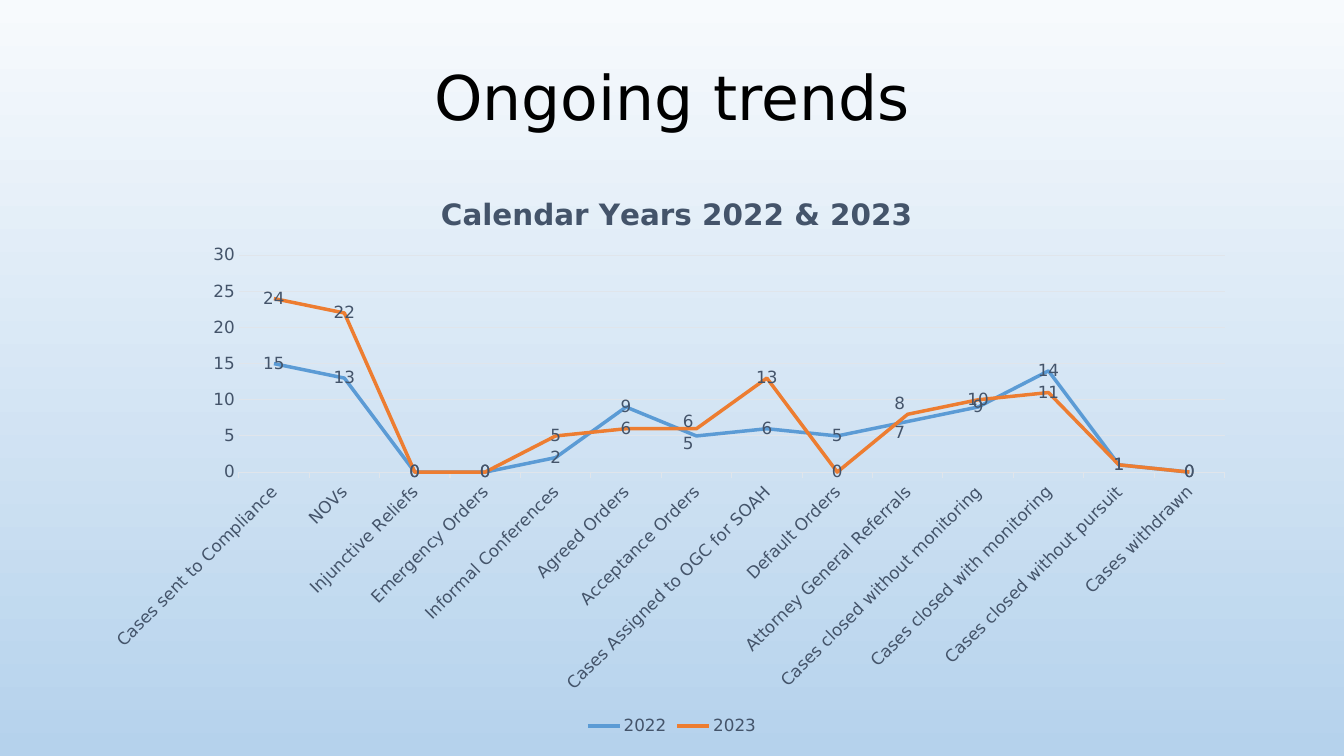
from lxml import etree
from pptx import Presentation
from pptx.chart.data import CategoryChartData
from pptx.dml.color import RGBColor
from pptx.enum.chart import (XL_CHART_TYPE, XL_LABEL_POSITION, XL_LEGEND_POSITION,
                             XL_MARKER_STYLE, XL_TICK_MARK)
from pptx.enum.text import MSO_ANCHOR, PP_ALIGN
from pptx.oxml.ns import qn
from pptx.util import Inches, Pt

LINE = XL_CHART_TYPE.LINE
CENTER_LABEL = XL_LABEL_POSITION.CENTER
BOTTOM = XL_LEGEND_POSITION.BOTTOM
NO_MARKER = XL_MARKER_STYLE.NONE
TICK_OUT, TICK_NONE = XL_TICK_MARK.OUTSIDE, XL_TICK_MARK.NONE

# Content
TITLE = "Ongoing trends"
CHART_TITLE = "Calendar Years 2022 & 2023"
CASES = [  # category, 2022, 2023
    ("Cases sent to Compliance", 15, 24),
    ("NOVs", 13, 22),
    ("Injunctive Reliefs", 0, 0),
    ("Emergency Orders", 0, 0),
    ("Informal Conferences", 2, 5),
    ("Agreed Orders", 9, 6),
    ("Acceptance Orders", 5, 6),
    ("Cases Assigned to OGC for SOAH", 6, 13),
    ("Default Orders", 5, 0),
    ("Attorney General Referrals", 7, 8),
    ("Cases closed without monitoring", 9, 10),
    ("Cases closed with monitoring", 14, 11),
    ("Cases closed without pursuit", 1, 1),
    ("Cases withdrawn", 0, 0),
]
YEARS = ["2022", "2023"]
COLORS = {"2022": "5B9BD5", "2023": "ED7D31", "text": "44546A", "grid": "E0E5EB",
          "title": "000000", "top": "F7FAFD", "bottom": "B5D2EC"}
FONT = "DejaVu Sans"

# Label shifts as shares of the chart: point -> (across, down), mirrored for 2023
LABEL_SHIFTS = {6: (-0.007, 0.013), 9: (-0.007, 0.019)}
# Chart parts as shares of the chart
PLOT = {"x": 0.126, "y": 0.158, "w": 0.851, "h": 0.377}
TITLE_SPOT = {"x": 0.296, "y": 0.043}

W, H = Inches(13.33), Inches(7.5)
MARGIN = Inches(0.92)


def color(name):
    return RGBColor.from_string(COLORS[name])


def style_font(font, size, name="text", bold=False):
    font.name, font.size, font.bold = FONT, Pt(size), bold
    font.color.rgb = color(name)


def style_line(line, name, width):
    line.color.rgb = color(name)
    line.width = Pt(width)


def set_layout(parent, index, spot, edge=True, inner=False):
    """Place a chart part by shares of the chart."""
    for old in parent.findall(qn("c:layout")):
        parent.remove(old)
    layout = etree.Element(qn("c:layout"))
    manual = etree.SubElement(layout, qn("c:manualLayout"))
    entries = [("layoutTarget", "inner")] if inner else []
    if edge:
        entries += [("xMode", "edge"), ("yMode", "edge")]
    for tag, value in entries + list(spot.items()):
        etree.SubElement(manual, qn("c:" + tag)).set("val", str(value))
    parent.insert(index, layout)


prs = Presentation()
prs.slide_width, prs.slide_height = W, H
s = prs.slides.add_slide(prs.slide_layouts[6])

# Background gradient
fill = s.background.fill
fill.gradient()
fill.gradient_angle = 270
for stop, name in zip(fill.gradient_stops, ("top", "bottom")):
    stop.color.rgb = color(name)

# Slide title
tf = s.shapes.add_textbox(MARGIN, H * 0.02, W - 2 * MARGIN, Inches(1.7)).text_frame
tf.word_wrap = True
tf.vertical_anchor = MSO_ANCHOR.MIDDLE
tf.text = TITLE
p = tf.paragraphs[0]
p.alignment, p.line_spacing = PP_ALIGN.CENTER, 0.9
style_font(p.runs[0].font, 44, "title")

# Chart
data = CategoryChartData()
data.categories = [row[0] for row in CASES]
for i, year in enumerate(YEARS, 1):
    data.add_series(year, [row[i] for row in CASES])
chart = s.shapes.add_chart(LINE, MARGIN, Inches(1.63), W - 2 * MARGIN,
                           Inches(5.71), data).chart
chart.font.name, chart.font.size = FONT, Pt(10)
plot = chart.plots[0]
plot.vary_by_categories = False
set_layout(chart.element.find(".//" + qn("c:plotArea")), 0, PLOT, inner=True)

# Chart title and legend
chart.has_title = True
title = chart.chart_title
title.include_in_layout = False
title.text_frame.text = CHART_TITLE
style_font(title.text_frame.paragraphs[0].runs[0].font, 21, bold=True)
set_layout(chart.element.find(".//" + qn("c:title")), 1, TITLE_SPOT)
chart.has_legend = True
chart.legend.position = BOTTOM
chart.legend.include_in_layout = False
style_font(chart.legend.font, 12)

# Axes
cat, val = chart.category_axis, chart.value_axis
for axis in (cat, val):
    style_font(axis.tick_labels.font, 12)
    axis.minor_tick_mark = TICK_NONE
cat.major_tick_mark, val.major_tick_mark = TICK_OUT, TICK_NONE
style_line(cat.format.line, "grid", 0.75)
cat.tick_labels.font  # text properties hold the slant of the labels
cat._element.find(qn("c:txPr")).find(qn("a:bodyPr")).set("rot", "-2700000")
val.minimum_scale, val.maximum_scale, val.major_unit = 0, 30, 5
val.format.line.fill.background()
val.has_major_gridlines = True
style_line(val.major_gridlines.format.line, "grid", 0.75)

# Series and their labels
for series, side in zip(plot.series, (1, -1)):
    series.smooth = False
    series.marker.style = NO_MARKER
    style_line(series.format.line, series.name, 2.5)
    labels = series.data_labels
    labels.show_value = True
    labels.position = CENTER_LABEL
    style_font(labels.font, 12)
    for point, (dx, dy) in LABEL_SHIFTS.items():
        label = series.points[point].data_label
        label.position = CENTER_LABEL
        style_font(label.font, 12)
    for dlbl, (dx, dy) in zip(series._element.iter(qn("c:dLbl")), LABEL_SHIFTS.values()):
        set_layout(dlbl, 1, {"x": dx, "y": side * dy}, edge=False)

prs.save("out.pptx")
